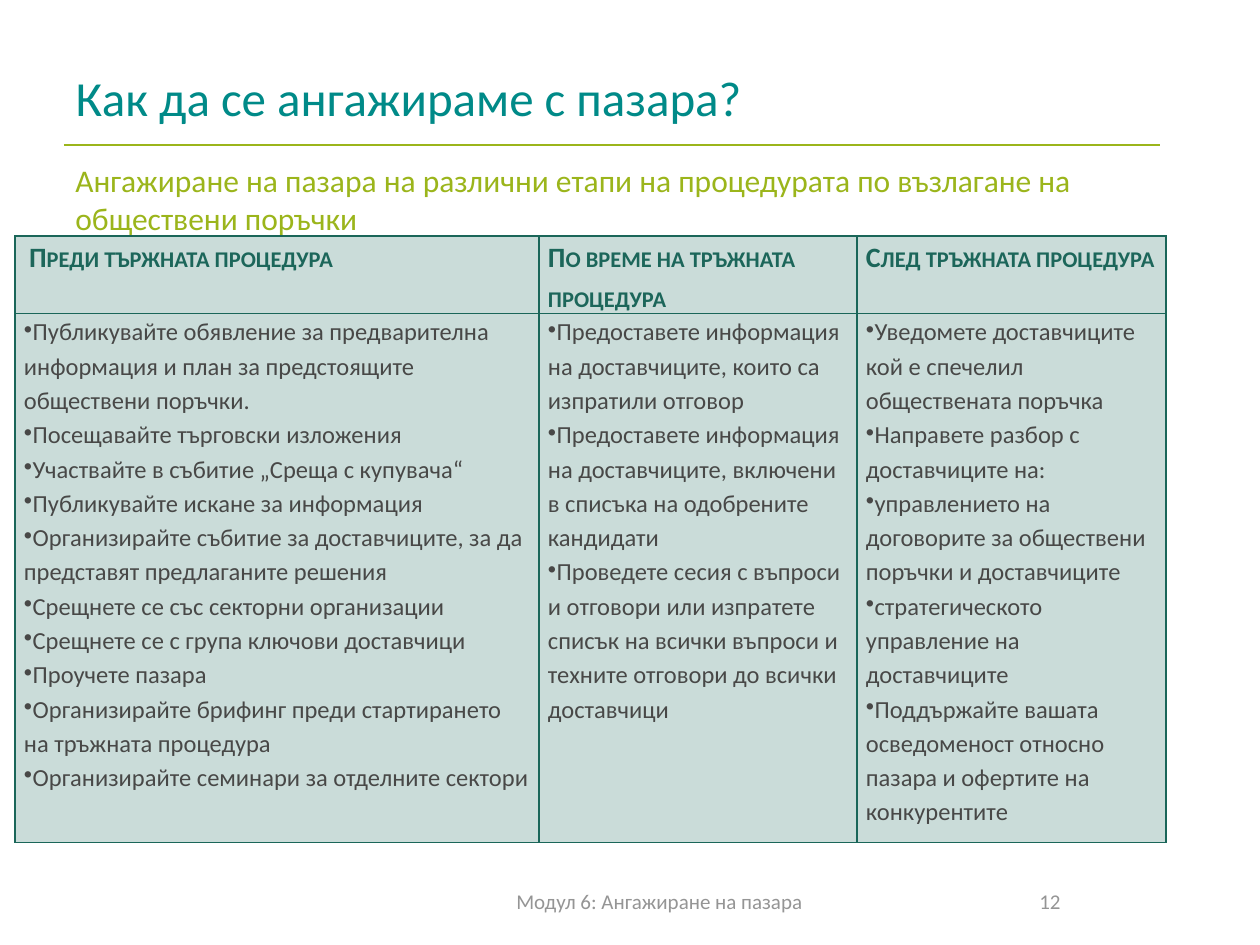
from lxml.etree import SubElement
from pptx import Presentation
from pptx.dml.color import RGBColor
from pptx.enum.shapes import MSO_CONNECTOR
from pptx.enum.text import MSO_ANCHOR as Anchor, PP_ALIGN as Align
from pptx.oxml.ns import qn
from pptx.util import Emu, Pt

EMU_PER_PX = 914400 / 126
FONT = "Calibri"
TEAL, LIME, GREY = "008A88", "9BB51B", "959595"
HEADING, BODY = "1C665A", "484847"
CELL_FILL, CELL_BORDER = "CADCD9", "1A6659"

COLUMN_WIDTHS = [524, 318, 309]
ROW_HEIGHTS = [73, 529]
STAGES = [
    (" Преди тържната процедура", [
        "Публикувайте обявление за предварителна информация и план за предстоящите обществени поръчки.",
        "Посещавайте търговски изложения",
        "Участвайте в събитие „Среща с купувача“",
        "Публикувайте искане за информация",
        "Организирайте събитие за доставчиците, за да представят предлаганите решения",
        "Срещнете се със секторни организации",
        "Срещнете се с група ключови доставчици",
        "Проучете пазара",
        "Организирайте брифинг преди стартирането на тръжната процедура",
        "Организирайте семинари за отделните сектори",
    ]),
    ("По време на тръжната процедура", [
        "Предоставете информация на доставчиците, които са изпратили отговор",
        "Предоставете информация на доставчиците, включени в списъка на одобрените кандидати",
        "Проведете сесия с въпроси и отговори или изпратете списък на всички въпроси "
        "и техните отговори до всички доставчици",
    ]),
    ("След тръжната процедура", [
        "Уведомете доставчиците кой е спечелил обществената поръчка",
        "Направете разбор с доставчиците на:",
        "управлението на договорите за обществени поръчки и доставчиците",
        "стратегическото управление на доставчиците",
        "Поддържайте вашата осведоменост относно пазара и офертите на конкурентите",
    ]),
]


def px(value):
    return Emu(round(value * EMU_PER_PX))


def rgb(value):
    return RGBColor.from_string(value)


def add_run(paragraph, text, size, color, bold=False):
    run = paragraph.add_run()
    run.text = text
    run.font.name = FONT
    run.font.size = Pt(size)
    run.font.bold = bold
    run.font.color.rgb = rgb(color)
    return run


def fill_frame(frame, text, size, color, align=Align.LEFT, anchor=Anchor.MIDDLE):
    frame.word_wrap = True
    frame.vertical_anchor = anchor
    paragraph = frame.paragraphs[0]
    paragraph.alignment = align
    add_run(paragraph, text, size, color)


def set_title(slide, text, left, top, width, height):
    title = slide.shapes.title
    title.left, title.top, title.width, title.height = map(px, (left, top, width, height))
    fill_frame(title.text_frame, text, 28, TEAL)


def add_text(slide, text, box, size, color, **layout):
    label = slide.shapes.add_textbox(*map(px, box))
    fill_frame(label.text_frame, text, size, color, **layout)


def add_rule(slide, left, right, y):
    rule = slide.shapes.add_connector(
        MSO_CONNECTOR.STRAIGHT, px(left), px(y), px(right), px(y))
    rule.line.color.rgb = rgb(LIME)
    rule.line.width = Pt(0.75)
    SubElement(rule._element.spPr, qn("a:effectLst"))


def style_cell(cell):
    cell.margin_left = cell.margin_right = px(9)
    cell.margin_top = cell.margin_bottom = 0
    properties = cell._tc.get_or_add_tcPr()
    for side in ("lnL", "lnR", "lnT", "lnB"):
        border = SubElement(properties, qn(f"a:{side}"), w=str(Pt(0.75)))
        solid = SubElement(border, qn("a:solidFill"))
        SubElement(solid, qn("a:srgbClr"), val=CELL_BORDER)
    cell.fill.solid()
    cell.fill.fore_color.rgb = rgb(CELL_FILL)


def write_heading(cell, text):
    paragraph = cell.text_frame.paragraphs[0]
    paragraph.line_spacing = 1.15
    paragraph.space_after = Pt(3)
    run = add_run(paragraph, text, 16, HEADING, bold=True)
    run.font._element.set("cap", "small")


def write_bullets(cell, items):
    frame = cell.text_frame
    for index, item in enumerate(items):
        paragraph = frame.add_paragraph() if index else frame.paragraphs[0]
        properties = paragraph._p.get_or_add_pPr()
        properties.set("marL", "0")
        properties.set("indent", "-228600")
        SubElement(properties, qn("a:buChar"), char="•")
        paragraph.line_spacing = 1.15
        add_run(paragraph, item, 14, BODY)


def add_stage_table(slide, left, top):
    table = slide.shapes.add_table(
        len(ROW_HEIGHTS), len(STAGES), px(left), px(top),
        px(sum(COLUMN_WIDTHS)), px(sum(ROW_HEIGHTS))).table
    table.first_row = table.horz_banding = False
    for column, width in zip(table.columns, COLUMN_WIDTHS):
        column.width = px(width)
    for row, height in zip(table.rows, ROW_HEIGHTS):
        row.height = px(height)
    for cell in table.iter_cells():
        style_cell(cell)
    for index, (heading, actions) in enumerate(STAGES):
        write_heading(table.cell(0, index), heading)
        write_bullets(table.cell(1, index), actions)


def main():
    deck = Presentation()
    deck.slide_width, deck.slide_height = px(1260), px(945)
    slide = deck.slides.add_slide(deck.slide_layouts[5])

    # Title, rule and subtitle
    add_rule(slide, 64, 1160, 145)
    set_title(slide, "Как да се ангажираме с пазара?", 63, 38, 1102, 117)
    add_text(slide, "Ангажиране на пазара на различни етапи на процедурата "
             "по възлагане на обществени поръчки",
             (63, 155, 1101, 79), 18, LIME, anchor=Anchor.TOP)

    # Actions at each stage of the procedure
    add_stage_table(slide, 15, 236)

    # Footer and page number
    add_text(slide, "Модул 6: Ангажиране на пазара", (362, 876, 595, 50),
             12, GREY, align=Align.CENTER)
    add_text(slide, "12", (903, 876, 294, 50), 12, GREY, align=Align.CENTER)

    deck.save("out.pptx")


if __name__ == "__main__":
    main()
